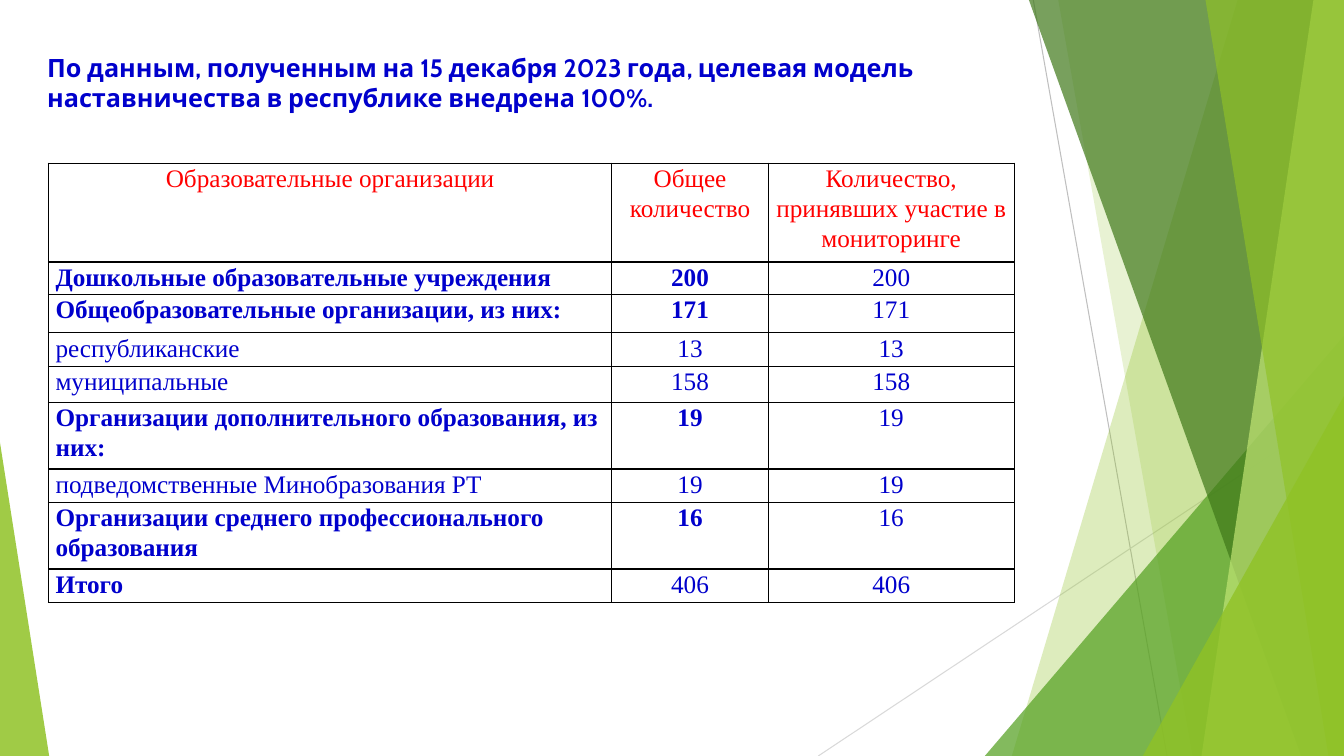
import pptx
import pptx.util
import pptx.dml.color
import pptx.enum.shapes
import pptx.enum.text
import pptx.oxml
import pptx.oxml.ns
from pptx.util import Cm, Pt

WIDTH, HEIGHT = 33.87, 19.05
COLORS = {
    "title": "0000CC", "header": "FF0000", "border": "000000",
    "ray": "BFBFBF", "pale_ray": "D9D9D9", "green": "90C226",
    "leaf": "54A021", "dark": "3F7819", "light": "C0E474",
}
TITLE = ("По данным, полученным на 15 декабря 2023 года, целевая модель "
         "наставничества в республике внедрена 100%.")
HEADER = ("Образовательные организации", "Общее количество",
          "Количество, принявших участие в мониторинге")
# label, total, participants, label is bold, total is bold, row height
ROWS = [
    ("Дошкольные образовательные учреждения", 200, 200, True, True, 0.58),
    ("Общеобразовательные организации, из них:", 171, 171, True, True, 0.97),
    ("республиканские", 13, 13, False, False, 0.84),
    ("муниципальные", 158, 158, False, False, 0.91),
    ("Организации дополнительного образования, из них:", 19, 19, True, True, 1.68),
    ("подведомственные Минобразования РТ", 19, 19, False, False, 0.84),
    ("Организации среднего профессионального образования", 16, 16, True, True, 1.68),
    ("Итого", 406, 406, True, False, 0.84),
]
HEADER_HEIGHT = 2.49
COLUMNS = (14.2, 3.94, 6.2)
RAYS = [((26.04, 0), (29.41, HEIGHT), "ray"),
        ((WIDTH, 10.24), (20.62, HEIGHT), "pale_ray")]
# From back to front. Bands: left edge at top and bottom, colour, opacity.
# Triangles: left, top, width, apex position, colour, opacity.
FACETS = [
    ("band", 31.19, 25.5, "green", 30),
    ("band", 26.67, 30.05, "green", 20),
    ("triangle", 24.82, 8.46, 9.05, 1, "leaf", 72),
    ("band", 25.93, 32.79, "dark", 70),
    ("band", 33.1, 30.28, "light", 70),
    ("band", 30.38, 33.48, "green", 65),
    ("triangle", 28.8, 9.98, 5.07, 1, "green", 80),
    ("triangle", 0, 11.15, 1.24, 0, "green", 85),
]


def rgb(name):
    return pptx.dml.color.RGBColor.from_string(COLORS[name])


def write(tf, text, font="Times New Roman", color="title", bold=False,
          align="LEFT", spacing=None, after=None):
    tf.word_wrap = True
    p = tf.paragraphs[0]
    p.alignment = getattr(pptx.enum.text.PP_ALIGN, align)
    p.line_spacing = spacing
    p.space_after = after
    r = p.add_run()
    r.text = text
    r.font.name, r.font.size, r.font.bold = font, Pt(18), bold
    r.font.color.rgb = rgb(color)


def paint(sp, color, opacity):
    sp.shadow.inherit = False
    sp.line.fill.background()
    sp.fill.solid()
    sp.fill.fore_color.rgb = rgb(color)
    clr = sp._element.spPr.find(".//" + pptx.oxml.ns.qn("a:srgbClr"))
    clr.append(pptx.oxml.parse_xml(
        f'<a:alpha {pptx.oxml.ns.nsdecls("a")} val="{opacity * 1000}"/>'))


def add_ray(shapes, start, end, color):
    line = shapes.add_connector(pptx.enum.shapes.MSO_CONNECTOR.STRAIGHT,
                                *map(Cm, start + end))
    line.line.color.rgb = rgb(color)
    line.line.width = Pt(0.75)
    line._element.spPr.append(pptx.oxml.parse_xml(
        f'<a:effectLst {pptx.oxml.ns.nsdecls("a")}/>'))


def add_band(shapes, top_x, bottom_x, color, opacity):
    """Fill from a slanted left edge to the right side of the slide."""
    builder = shapes.build_freeform(Cm(top_x), 0)
    corners = [(WIDTH, 0), (WIDTH, HEIGHT), (bottom_x, HEIGHT)]
    builder.add_line_segments([(Cm(x), Cm(y)) for x, y in corners], close=True)
    paint(builder.convert_to_shape(), color, opacity)


def add_triangle(shapes, left, top, width, apex, color, opacity):
    sp = shapes.add_shape(pptx.enum.shapes.MSO_SHAPE.ISOSCELES_TRIANGLE,
                          Cm(left), Cm(top), Cm(width), Cm(HEIGHT - top))
    sp.adjustments[0] = apex
    paint(sp, color, opacity)


def format_cell(cell):
    """Clear the fill, set the margins and draw a border on all sides."""
    cell.fill.background()
    cell.margin_left = cell.margin_right = Cm(0.18)
    cell.margin_top = cell.margin_bottom = 0
    tc_pr = cell._tc.get_or_add_tcPr()
    for i, side in enumerate("LRTB"):
        tc_pr.insert(i, pptx.oxml.parse_xml(
            f'<a:ln{side} {pptx.oxml.ns.nsdecls("a")} w="{Pt(1)}"><a:solidFill>'
            f'<a:srgbClr val="{COLORS["border"]}"/></a:solidFill></a:ln{side}>'))


def add_monitoring_table(shapes):
    heights = [HEADER_HEIGHT] + [row[-1] for row in ROWS]
    table = shapes.add_table(len(heights), len(COLUMNS), Cm(1.22), Cm(4.11),
                             Cm(sum(COLUMNS)), Cm(sum(heights))).table
    table.first_row = table.horz_banding = False
    for column, width in zip(table.columns, COLUMNS):
        column.width = Cm(width)
    for row, height in zip(table.rows, heights):
        row.height = Cm(height)

    lines = [(HEADER, (False,) * 3)]
    lines += [(row[:3], (row[3], row[4], False)) for row in ROWS]
    for i, (texts, bolds) in enumerate(lines):
        for j, (text, bold) in enumerate(zip(texts, bolds)):
            cell = table.cell(i, j)
            format_cell(cell)
            write(cell.text_frame, str(text), bold=bold,
                  color="title" if i else "header",
                  align="LEFT" if i and not j else "CENTER",
                  spacing=1.07, after=Pt(8))


def main():
    prs = pptx.Presentation()
    prs.slide_width, prs.slide_height = Cm(WIDTH), Cm(HEIGHT)
    shapes = prs.slides.add_slide(prs.slide_layouts[6]).shapes
    for ray in RAYS:
        add_ray(shapes, *ray)
    builders = {"band": add_band, "triangle": add_triangle}
    for kind, *facet in FACETS:
        builders[kind](shapes, *facet)
    title = shapes.add_textbox(Cm(0.94), Cm(1.19), Cm(25.2), Cm(1.8))
    write(title.text_frame, TITLE, font="Cabin", bold=True)
    add_monitoring_table(shapes)
    prs.save("out.pptx")


if __name__ == "__main__":
    main()
